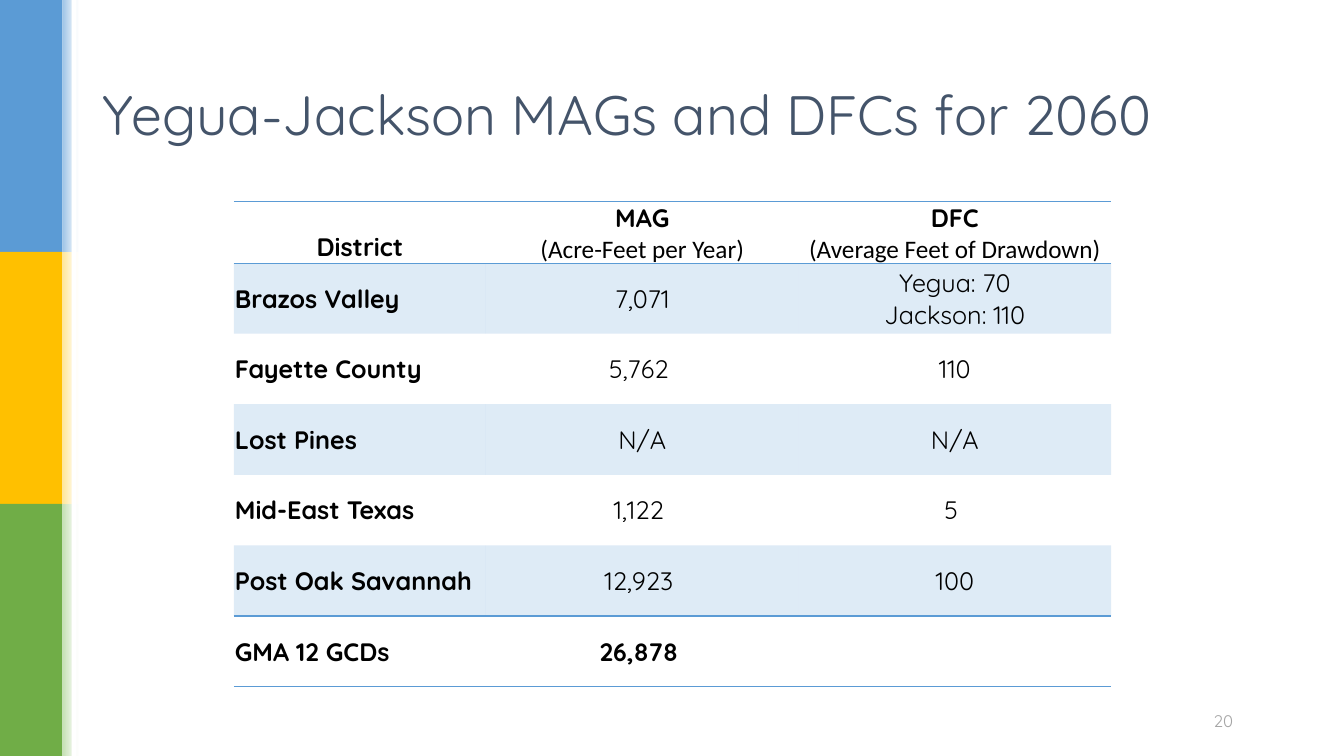
"""Build the slide of Yegua-Jackson MAGs and DFCs for 2060."""
from lxml import etree
from pptx import Presentation, util as u
from pptx.dml.color import RGBColor
from pptx.enum import shapes, text
from pptx.oxml.ns import qn

HUES = {"blue": "5B9BD5", "gold": "FFC000", "green": "70AD47",
        "sky": "9DC3E6", "sand": "FFE699", "mint": "C5E0B4",
        "white": "FFFFFF", "slate": "44546A", "gray": "A5A5A5",
        "black": "000000"}
ROWS = [
    ["District", "MAG\n(Acre-Feet per Year)", "DFC\n(Average Feet of Drawdown)"],
    ["Brazos Valley", "7,071", "Yegua: 70\nJackson: 110"],
    ["Fayette County", "5,762 ", "110"],
    ["Lost Pines", "N/A", "N/A"],
    ["Mid-East Texas", "1,122 ", "5 "],
    ["Post Oak Savannah", "12,923 ", "100"],
    ["GMA 12 GCDs", "26,878 ", ""],
]
WIDE, HIGH = 13.33, 7.5
LAST = len(ROWS) - 1

deck = Presentation()
deck.slide_width, deck.slide_height = u.Inches(WIDE), u.Inches(HIGH)
slide = deck.slides.add_slide(deck.slide_layouts[5])


def block(left, top, wide, high, hue, fade=False):
    box = slide.shapes.add_shape(
        shapes.MSO_SHAPE.RECTANGLE, *map(u.Inches, (left, top, wide, high)))
    box.shadow.inherit = False
    box.line.fill.background()
    if fade:
        box.fill.gradient()
        box.fill.gradient_angle = 0
        for stop, tone in zip(box.fill.gradient_stops, (hue, "white")):
            stop.color.rgb = RGBColor.from_string(HUES[tone])
    else:
        box.fill.solid()
        box.fill.fore_color.rgb = RGBColor.from_string(HUES[hue])


def style(para, size, hue, face="Quicksand", bold=False):
    for run in para.runs:
        run.font.name, run.font.size, run.font.bold = face, u.Pt(size), bold
        run.font.color.rgb = RGBColor.from_string(HUES[hue])


third = HIGH / 3
for i, (hue, tint) in enumerate([("blue", "sky"), ("gold", "sand"), ("green", "mint")]):
    block(0, i * third, 0.62, third, hue)
    block(0.62, i * third, 0.16, third, tint, fade=True)
block(0.71, 0, 0.05, HIGH, "white")

title = slide.shapes.title
title.left, title.top, title.width, title.height = map(u.Inches, (0.92, 0.4, 11.5, 1.45))
title.text_frame.text = "Yegua-Jackson MAGs and DFCs for 2060"
title.text_frame.vertical_anchor = text.MSO_ANCHOR.MIDDLE
head = title.text_frame.paragraphs[0]
head.alignment = text.PP_ALIGN.LEFT
style(head, 39.6, "slate")

page = slide.shapes.add_textbox(*map(u.Inches, (8.83, 6.95, 3.5, 0.4))).text_frame
page.word_wrap = True
page.vertical_anchor = text.MSO_ANCHOR.MIDDLE
page.text = "20"
page.paragraphs[0].alignment = text.PP_ALIGN.RIGHT
style(page.paragraphs[0], 12, "gray")

frame = slide.shapes.add_table(
    len(ROWS), 3, *map(u.Inches, (2.32, 2, 8.7, 4.81)))
grid = frame.table
grid.first_row = grid.horz_banding = False
plain = next(frame.element.iter(qn("a:tableStyleId")))
plain.text = "{2D5ABB26-0587-4C30-8999-92F81FD0307C}"
for col, wide in zip(grid.columns, (2.5, 3.1, 3.1)):
    col.width = u.Inches(wide)

for r, row in enumerate(ROWS):
    grid.rows[r].height = u.Inches(0.7 if r else 0.61)
    for c, words in enumerate(row):
        cell = grid.cell(r, c)
        cell.margin_left = cell.margin_right = cell.margin_top = u.Inches(0.01)
        cell.margin_bottom = 0
        cell.vertical_anchor = text.MSO_ANCHOR.MIDDLE if r else text.MSO_ANCHOR.BOTTOM
        cell.text_frame.text = words
        for p, para in enumerate(cell.text_frame.paragraphs):
            unit = r == 0 and p == 1
            side = r > 0 and c == 0
            para.alignment = text.PP_ALIGN.LEFT if side else text.PP_ALIGN.CENTER
            style(para, 18, "black", "Calibri" if unit else "Quicksand",
                  not unit and (c == 0 or r in (0, LAST)))
        if r % 2:
            cell.fill.solid()
            cell.fill.fore_color.rgb = RGBColor.from_string(HUES["blue"])
        else:
            cell.fill.background()

for i, prop in enumerate(frame.element.iter(qn("a:tcPr"))):
    r = i // 3
    for tone in prop.iter(qn("a:srgbClr")):
        etree.SubElement(tone, qn("a:alpha"), val="20000")
    if r in (0, LAST):
        for spot, edge in enumerate(("a:lnT", "a:lnB")):
            line = etree.Element(qn(edge), w=str(u.Pt(1)))
            fill = etree.SubElement(line, qn("a:solidFill"))
            etree.SubElement(fill, qn("a:srgbClr"), val=HUES["blue"])
            prop.insert(spot, line)

deck.save("out.pptx")
